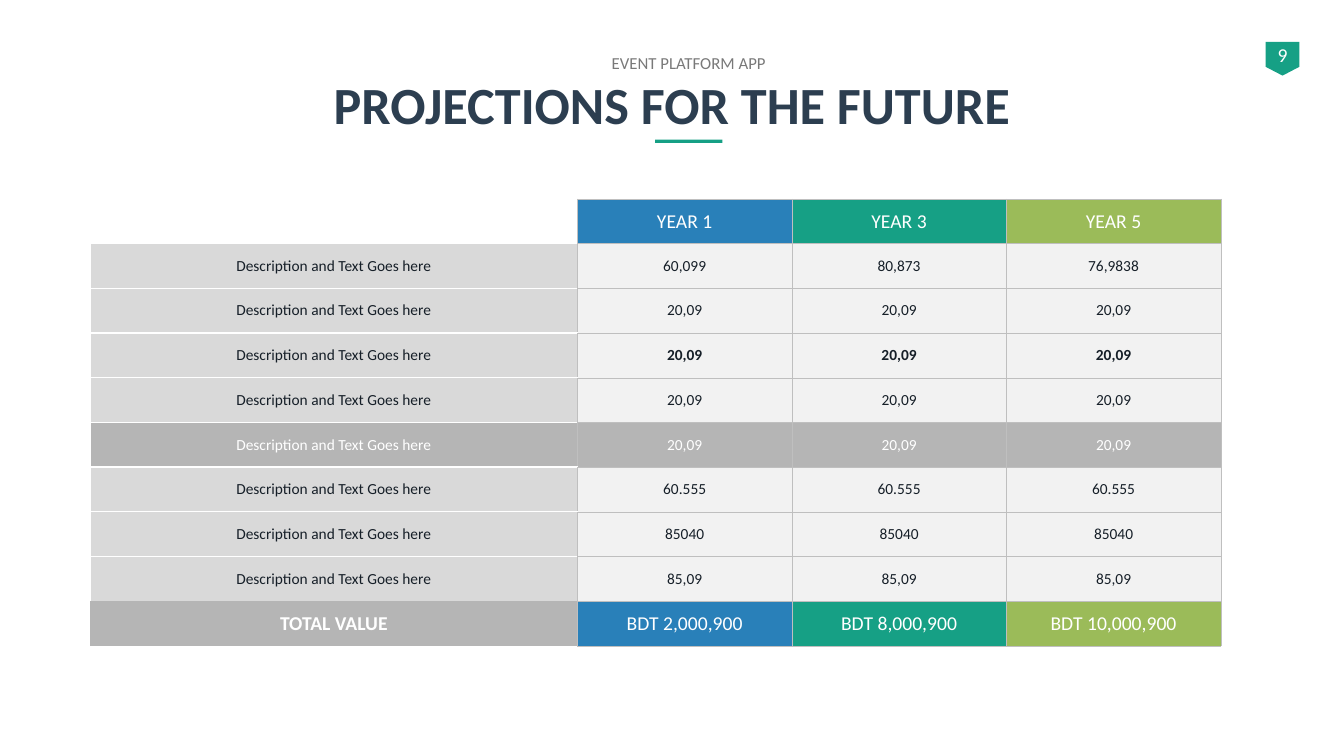
"""Build the slide with the three-year projections table."""
from lxml.etree import SubElement
from pptx import Presentation
from pptx.dml.color import RGBColor
from pptx.enum.shapes import MSO_SHAPE as Shape
from pptx.enum.text import MSO_ANCHOR as Anchor, MSO_AUTO_SIZE as AutoSize, PP_ALIGN as Align
from pptx.oxml.ns import qn
from pptx.util import Pt

FONT = "Calibri"
WHITE, NAVY, INK, GREY = "FFFFFF", "2C3E50", "161F28", "797979"
BLUE, GREEN, LIME = "2980B9", "16A085", "9BBB59"
LABEL_FILL, VALUE_FILL, BAND_FILL, RULE = "D9D9D9", "F2F2F2", "B5B5B5", "BFBFBF"
YEAR_FILLS = [BLUE, GREEN, LIME]
LABEL = "Description and Text Goes here"
ROWS = [
    ["", "YEAR 1", "YEAR 3", "YEAR 5"],
    [LABEL, "60,099", "80,873", "76,9838"],
    *[[LABEL] + [value] * 3 for value in
      ["20,09", "20,09", "20,09", "20,09", "60.555", "85040", "85,09"]],
    ["TOTAL VALUE", "BDT 2,000,900", "BDT 8,000,900", "BDT 10,000,900"],
]
BOLD_ROW, BAND_ROW, TOTAL_ROW = 3, 5, len(ROWS) - 1
COLUMN_WIDTHS = [348, 153.2, 153.2, 153.2]
ROW_HEIGHT = 31.93


def color(hex_code):
    """Return the colour for a hex string."""
    return RGBColor.from_string(hex_code)


def write(frame, text, size, hex_code, bold=False):
    """Put one centred run into a text frame."""
    para = frame.paragraphs[0]
    para.alignment = Align.CENTER
    span = para.add_run()
    span.text = text
    span.font.name = FONT
    span.font.size = Pt(size)
    span.font.bold = bold
    span.font.color.rgb = color(hex_code)


def place(shape, left, top, width, height):
    """Move and size a shape, in points."""
    shape.left, shape.top = Pt(left), Pt(top)
    shape.width, shape.height = Pt(width), Pt(height)


def add_title(page, text):
    """Fill the title placeholder."""
    title = page.shapes.title
    place(title, 48, 47.5, 864, 52.6)
    title.text_frame.vertical_anchor = Anchor.MIDDLE
    title.text_frame.auto_size = AutoSize.NONE
    write(title.text_frame, text, 37.3, NAVY, True)


def add_text(page, bounds, text, size, hex_code, wrap=True):
    """Add a text box with one centred line."""
    box = page.shapes.add_textbox(*map(Pt, bounds))
    box.text_frame.word_wrap = wrap
    write(box.text_frame, text, size, hex_code)


def add_block(page, kind, bounds, fill):
    """Add a plain filled shape without outline."""
    block = page.shapes.add_shape(kind, *map(Pt, bounds))
    block.shadow.inherit = False
    block.fill.solid()
    block.fill.fore_color.rgb = color(fill)
    block.line.fill.background()
    return block


def cell_borders(row, column):
    """Return the line of each side of a cell as colour and width, or None."""
    thin, gap = (RULE, 0.25), (WHITE, 1)
    if column:
        return dict.fromkeys(["L", "R", "T", "B"], thin)
    labelled = 0 < row < TOTAL_ROW
    return {
        "L": gap if labelled else None,
        "R": thin,
        "T": gap if 1 < row < TOTAL_ROW else None,
        "B": gap if 0 < row < TOTAL_ROW - 1 else None,
    }


def draw_borders(cell, borders):
    """Write the border lines of a cell."""
    properties = cell._tc.get_or_add_tcPr()
    for side, border in borders.items():
        line = SubElement(properties, qn(f"a:ln{side}"))
        if border is None:
            SubElement(line, qn("a:noFill"))
            continue
        hex_code, width = border
        line.set("w", str(Pt(width)))
        fill = SubElement(line, qn("a:solidFill"))
        SubElement(fill, qn("a:srgbClr")).set("val", hex_code)


def cell_fill(row, column):
    """Return the fill colour of a cell, or None for the empty corner."""
    if row in (0, TOTAL_ROW) and column:
        return YEAR_FILLS[column - 1]
    if row == 0:
        return None
    if row in (BAND_ROW, TOTAL_ROW):
        return BAND_FILL
    return VALUE_FILL if column else LABEL_FILL


def format_cell(cell, row, column, text):
    """Set borders, fill and text of one cell."""
    cell.vertical_anchor = Anchor.MIDDLE
    cell.margin_left = cell.margin_right = Pt(8.6)
    cell.margin_top = cell.margin_bottom = Pt(4.3)
    draw_borders(cell, cell_borders(row, column))
    fill = cell_fill(row, column)
    if fill is None:
        cell.fill.background()
        return
    cell.fill.solid()
    cell.fill.fore_color.rgb = color(fill)
    outer = row in (0, TOTAL_ROW)
    bold = (row == BOLD_ROW and column > 0) or (row == TOTAL_ROW and column == 0)
    ink = WHITE if outer or row == BAND_ROW else INK
    write(cell.text_frame, text, 14 if outer else 11, ink, bold)


def add_projections(page):
    """Add the table of yearly values."""
    frame = page.shapes.add_table(
        len(ROWS), len(COLUMN_WIDTHS), Pt(64.5), Pt(142.1),
        Pt(sum(COLUMN_WIDTHS)), Pt(ROW_HEIGHT * len(ROWS)))
    table = frame.table
    table.first_row = table.horz_banding = False
    for column, width in zip(table.columns, COLUMN_WIDTHS):
        column.width = Pt(width)
    for row, texts in enumerate(ROWS):
        table.rows[row].height = Pt(ROW_HEIGHT)
        for column, text in enumerate(texts):
            format_cell(table.cell(row, column), row, column, text)


def main():
    """Build and save the deck."""
    deck = Presentation()
    deck.slide_width, deck.slide_height = Pt(960), Pt(540)
    page = deck.slides.add_slide(deck.slide_layouts[5])
    badge = add_block(page, Shape.PENTAGON, (904.1, 30, 24, 24), GREEN)
    badge.rotation = 90
    badge.adjustments[0] = 0.26
    add_text(page, (900.7, 27.4, 31, 24.5), "9", 14, WHITE, wrap=False)
    add_title(page, "PROJECTIONS FOR THE FUTURE")
    add_text(page, (60, 33.8, 864, 21.6), "EVENT PLATFORM APP", 12, GREY)
    add_block(page, Shape.RECTANGLE, (468, 99.7, 48, 2.4), GREEN)
    add_projections(page)
    deck.save("out.pptx")


if __name__ == "__main__":
    main()
